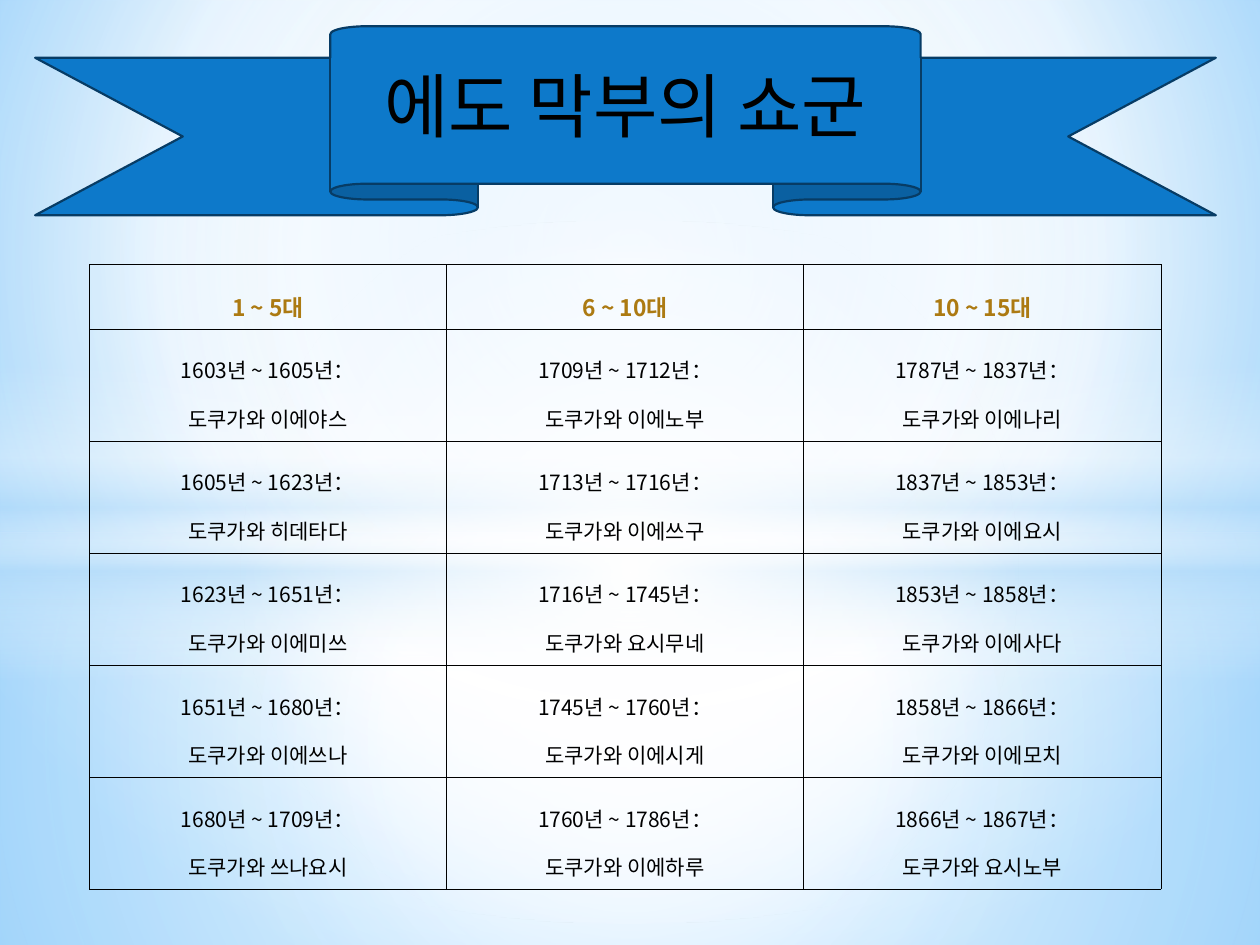
import pptx
import pptx.dml.color
import pptx.enum.shapes
import pptx.enum.text
import pptx.oxml
import pptx.oxml.ns
import pptx.util
import lxml.etree

Cm = pptx.util.Cm
Pt = pptx.util.Pt
Kind = pptx.enum.shapes.MSO_SHAPE
MIDDLE = pptx.enum.text.MSO_ANCHOR.MIDDLE
CENTER = pptx.enum.text.PP_ALIGN.CENTER
NAMESPACE = pptx.oxml.ns.nsdecls("a")


def color(value):
    return pptx.dml.color.RGBColor.from_string(value)


def set_gradient(owner, stops, direction):
    """Stops are (position, colour, opacity) in percent."""
    owner.fill.gradient()
    element = slide.element if owner is slide.background else owner.element
    gradient = element.find(".//" + pptx.oxml.ns.qn("a:gradFill"))
    stop_xml = "".join(
        f'<a:gs pos="{position * 1000}"><a:srgbClr val="{value}">'
        f'<a:alpha val="{opacity * 1000}"/></a:srgbClr></a:gs>'
        for position, value, opacity in stops)
    new_gradient = pptx.oxml.parse_xml(
        f'<a:gradFill {NAMESPACE} rotWithShape="1"><a:gsLst>{stop_xml}</a:gsLst>{direction}</a:gradFill>')
    gradient.getparent().replace(gradient, new_gradient)


presentation = pptx.Presentation()
presentation.slide_width, presentation.slide_height = Cm(25.4), Cm(19.05)
slide = presentation.slides.add_slide(presentation.slide_layouts[6])

# Background
circle = '<a:path path="circle"><a:fillToRect l="{}" t="{}" r="{}" b="{}"/></a:path>'
centered = circle.format(50000, 50000, 50000, 50000)
vertical = '<a:lin ang="5400000" scaled="0"/>'
set_gradient(slide.background,
             [(0, "9ED5FF", 100), (60, "FFFFFF", 100), (100, "5BB9FF", 100)],
             circle.format(20000, 10000, 20000, 60000))

# Sky glow layers: shape, top, height, stops, direction
layers = [
    (Kind.RECTANGLE, 10.74, 8.31,
     [(0, "FFFFFF", 92), (37, "FFFFFF", 77), (100, "B4DCFA", 80)], centered),
    (Kind.RECTANGLE, 0, 10.74,
     [(0, "FFFFFF", 90), (48, "FFFFFF", 63), (100, "B4DCFA", 80)], centered),
    (Kind.RECTANGLE, 7.37, 6.35,
     [(0, "FFFFFF", 0), (29, "FFFFFF", 30), (45, "B4DCFA", 40),
      (55, "FFFFFF", 26), (65, "B4DCFA", 60), (100, "FFFFFF", 0)], vertical),
    (Kind.OVAL, 4.45, 14.17, [(0, "FFFFFF", 100), (54, "FFFFFF", 0)], centered),
]
for kind, top, height, stops, direction in layers:
    layer = slide.shapes.add_shape(kind, 0, Cm(top), Cm(25.4), Cm(height))
    layer.shadow.inherit = False
    layer.line.fill.background()
    set_gradient(layer, stops, direction)

# Shogun table: heading, then (start, end, given name) for each column
columns = [
    ("1 ~ 5", [(1603, 1605, "이에야스"), (1605, 1623, "히데타다"), (1623, 1651, "이에미쓰"),
               (1651, 1680, "이에쓰나"), (1680, 1709, "쓰나요시")]),
    ("6 ~ 10", [(1709, 1712, "이에노부"), (1713, 1716, "이에쓰구"), (1716, 1745, "요시무네"),
                (1745, 1760, "이에시게"), (1760, 1786, "이에하루")]),
    ("10 ~ 15", [(1787, 1837, "이에나리"), (1837, 1853, "이에요시"), (1853, 1858, "이에사다"),
                 (1858, 1866, "이에모치"), (1866, 1867, "요시노부")]),
]
number_font, korean_font = "Noto Sans CJK KR", "Lato"
heading_format = {"size": Pt(13), "bold": True}
body_format = {"size": Pt(12), "bold": False}
cell_format = {"vertical_anchor": MIDDLE, "margin_left": Cm(0.18), "margin_right": Cm(0.18),
               "margin_top": Cm(0.05), "margin_bottom": Cm(0.05)}
paragraph_format = {"alignment": CENTER, "line_spacing": 1.6}

table = slide.shapes.add_table(6, 3, Cm(1.8), Cm(5.33), Cm(21.6), Cm(12.6)).table
table.first_row = table.horz_banding = False
for column in table.columns:
    column.width = Cm(7.2)
for row_index, row in enumerate(table.rows):
    row.height = Cm(2.26 if row_index else 1.3)

for column_index, (heading, reigns) in enumerate(columns):
    contents = [[[(heading, number_font), ("대", korean_font)]]]
    for start, end, name in reigns:
        contents.append([
            [(str(start), number_font), ("년 ", korean_font),
             (f"~ {end}", number_font), ("년：", korean_font)],
            [(f"도쿠가와 {name}", korean_font)],
        ])
    for row_index, lines in enumerate(contents):
        cell = table.cell(row_index, column_index)
        for attribute, value in cell_format.items():
            setattr(cell, attribute, value)
        cell_properties = cell._tc.get_or_add_tcPr()
        for side in ("lnL", "lnR", "lnT", "lnB"):
            cell_properties.append(pptx.oxml.parse_xml(
                f'<a:{side} {NAMESPACE} w="3600"><a:solidFill><a:srgbClr val="000000"/>'
                f'</a:solidFill></a:{side}>'))
        cell.fill.background()

        text_color = "000000" if row_index else "AC7A12"
        font_format = body_format if row_index else heading_format
        for line_index, pieces in enumerate(lines):
            frame = cell.text_frame
            paragraph = frame.add_paragraph() if line_index else frame.paragraphs[0]
            for attribute, value in paragraph_format.items():
                setattr(paragraph, attribute, value)
            for text, font_name in pieces:
                run = paragraph.add_run()
                run.text = text
                run.font.name = font_name
                run.font.color.rgb = color(text_color)
                for attribute, value in font_format.items():
                    setattr(run.font, attribute, value)

# Title ribbon
ribbon = slide.shapes.add_shape(Kind.UP_RIBBON, Cm(0.71), Cm(0.53), Cm(23.8), Cm(3.81))
ribbon.shadow.inherit = False
ribbon.fill.solid()
ribbon.fill.fore_color.rgb = color("0D79CA")
ribbon.line.color.rgb = color("073C65")
ribbon.line.width = Pt(1.25)
ribbon.text_frame.vertical_anchor = MIDDLE
paragraph = ribbon.text_frame.paragraphs[0]
paragraph.alignment = CENTER
run = paragraph.add_run()
run.text = "에도 막부의 쇼군"
run.font.color.rgb = color("000000")
for attribute, value in {"name": korean_font, "size": Pt(40)}.items():
    setattr(run.font, attribute, value)

presentation.save("out.pptx")
